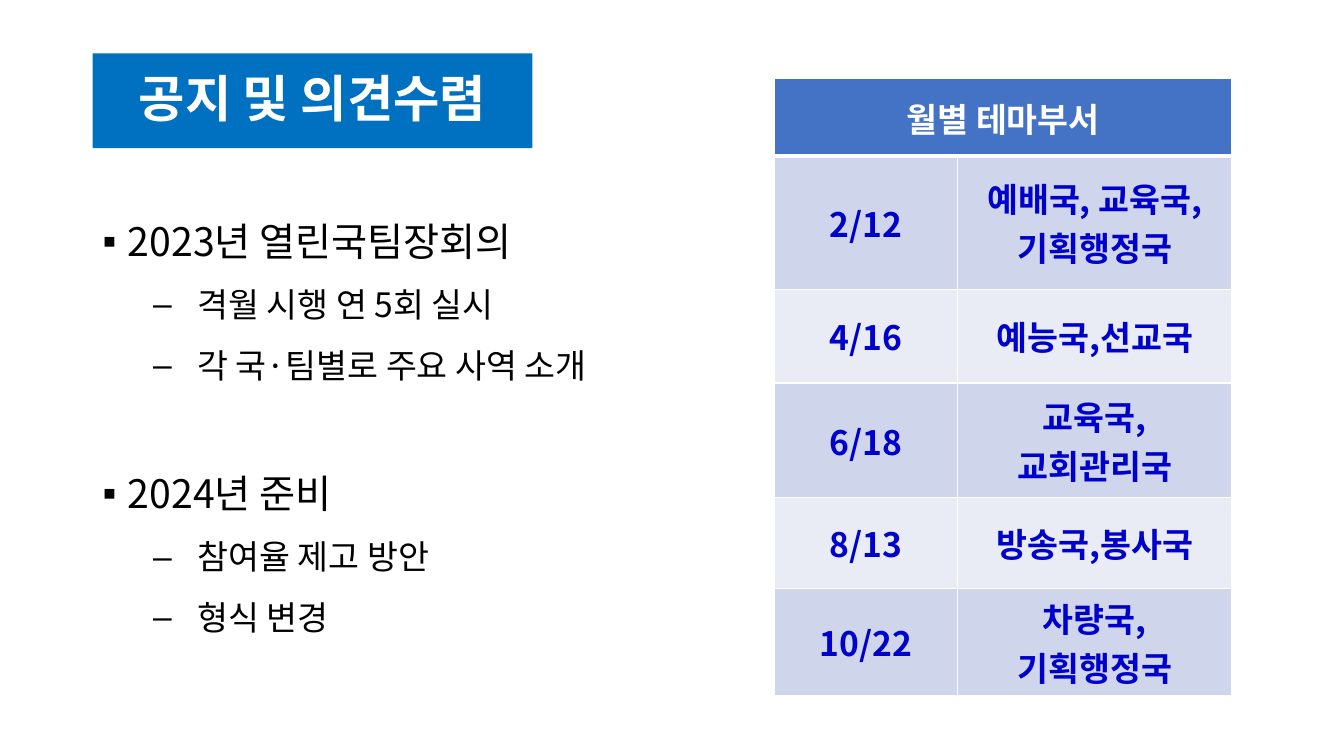
import pptx
import pptx.dml.color
import pptx.enum.shapes
import pptx.enum.text
import pptx.oxml
import pptx.oxml.ns
import pptx.util
from lxml import etree

Inches = pptx.util.Inches
Pt = pptx.util.Pt
FONT = "Noto Sans CJK KR"

AGENDA = [
    (0, "2023년 열린국팀장회의"),
    (1, "격월 시행 연 5회 실시"),
    (1, "각 국·팀별로 주요 사역 소개\v"),
    (0, "2024년 준비"),
    (1, "참여율 제고 방안"),
    (1, "형식 변경"),
]
LEVELS = [("▪", 28, 0.25, 0.25), ("–", 24, 0.94, 0.44)]
SCHEDULE = [
    ("2/12", "예배국, 교육국, 기획행정국", 1.32),
    ("4/16", "예능국,선교국", 0.93),
    ("6/18", "교육국,\n교회관리국", 1.14),
    ("8/13", "방송국,봉사국", 0.9),
    ("10/22", "차량국,\n기획행정국", 1.06),
]


def color(value):
    return pptx.dml.color.RGBColor.from_string(value)


def paint(target, value):
    target.fill.solid()
    target.fill.fore_color.rgb = color(value)


def add_xml(parent, tag, **attributes):
    return etree.SubElement(parent, pptx.oxml.ns.qn(tag), attributes)


def style(paragraph, size, value, bold=False):
    font = paragraph.font
    font.name = FONT
    font.size = Pt(size)
    font.bold = bold
    font.color.rgb = color(value)
    defaults = paragraph._p.pPr.find(pptx.oxml.ns.qn("a:defRPr"))
    add_xml(defaults, "a:ea", typeface=FONT)


def add_title(slide, left, top, width, height):
    banner = slide.shapes.add_shape(
        pptx.enum.shapes.MSO_SHAPE.RECTANGLE,
        Inches(left), Inches(top), Inches(width), Inches(height))
    banner.shadow.inherit = False
    paint(banner, "0070C0")
    banner.line.fill.background()
    banner.text_frame.vertical_anchor = pptx.enum.text.MSO_ANCHOR.MIDDLE
    heading = banner.text_frame.paragraphs[0]
    heading.text = "공지 및 의견수렴"
    heading.alignment = pptx.enum.text.PP_ALIGN.CENTER
    heading.line_spacing = 0.9
    style(heading, 36, "FFFFFF", True)


def add_agenda(slide, left, top, width, height):
    agenda = slide.shapes.add_textbox(
        Inches(left), Inches(top), Inches(width), Inches(height)).text_frame
    agenda.word_wrap = True
    for index, (level, text) in enumerate(AGENDA):
        bullet, size, margin, hanging = LEVELS[level]
        item = agenda.add_paragraph() if index else agenda.paragraphs[0]
        item.text = text
        item.level = level
        item.line_spacing = 1.5
        properties = item._p.get_or_add_pPr()
        properties.set("marL", str(Inches(margin)))
        properties.set("indent", str(-Inches(hanging)))
        add_xml(properties, "a:buFont", typeface="Arial")
        add_xml(properties, "a:buChar", char=bullet)
        style(item, size, "000000")


def fill_cell(cell, text, background, foreground, bottom=1):
    cell.text = text
    cell.vertical_anchor = pptx.enum.text.MSO_ANCHOR.MIDDLE
    for paragraph in cell.text_frame.paragraphs:
        paragraph.alignment = pptx.enum.text.PP_ALIGN.CENTER
        style(paragraph, 24, foreground, True)
    properties = cell._tc.get_or_add_tcPr()
    for side, weight in (("L", 1), ("R", 1), ("T", 1), ("B", bottom)):
        border = add_xml(properties, f"a:ln{side}", w=str(Pt(weight)))
        add_xml(add_xml(border, "a:solidFill"), "a:srgbClr", val="FFFFFF")
    paint(cell, background)


def add_schedule(slide, left, top, width, height):
    schedule = slide.shapes.add_table(
        len(SCHEDULE) + 1, 2,
        Inches(left), Inches(top), Inches(width), Inches(height)).table
    schedule.columns[0].width = Inches(width * 0.4)
    schedule.columns[1].width = Inches(width * 0.6)
    schedule.rows[0].height = Inches(0.77)
    schedule.cell(0, 0).merge(schedule.cell(0, 1))
    fill_cell(schedule.cell(0, 0), "월별 테마부서", "4472C4", "FFFFFF", 3)
    for row, (date, departments, row_height) in enumerate(SCHEDULE, 1):
        schedule.rows[row].height = Inches(row_height)
        band = "CFD5EA" if row % 2 else "E9EBF5"
        for column, text in enumerate((date, departments)):
            fill_cell(schedule.cell(row, column), text, band, "0000CC")


def main():
    presentation = pptx.Presentation()
    presentation.slide_width = Inches(13.33)
    presentation.slide_height = Inches(7.5)
    slide = presentation.slides.add_slide(presentation.slide_layouts[6])
    add_title(slide, 0.92, 0.53, 4.36, 0.94)
    add_agenda(slide, 0.92, 1.87, 6.51, 4.88)
    add_schedule(slide, 7.68, 0.78, 4.54, 6.12)
    presentation.save("out.pptx")


if __name__ == "__main__":
    main()
